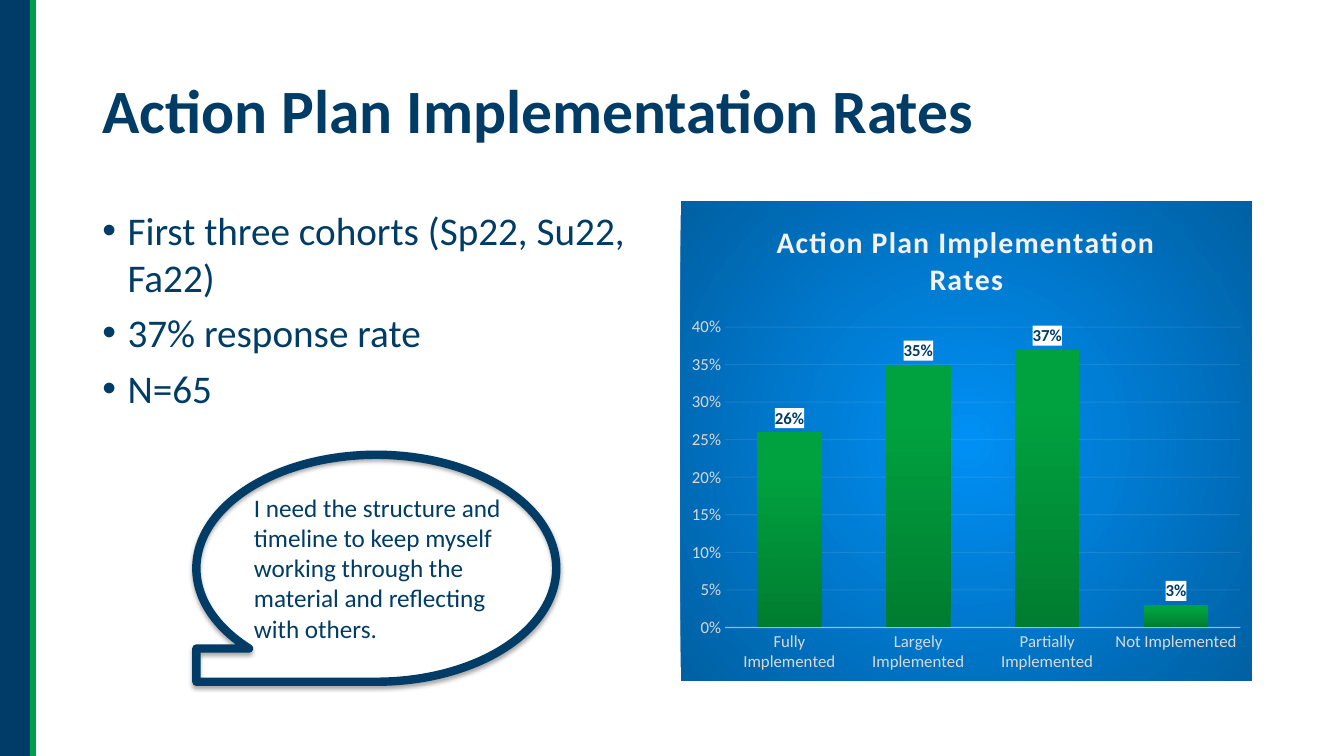
from lxml import etree
from pptx import Presentation
from pptx import util as u
from pptx.chart.data import CategoryChartData
from pptx.dml.color import RGBColor
from pptx.enum import chart as ch, shapes, text
from pptx.oxml import parse_xml
from pptx.oxml.ns import nsdecls, qn

COLORS = {
    "navy": "003C66", "green": "009F4D", "white": "FFFFFF",
    "axis text": "D9D9D9", "pale": "F2F2F2",
    "blue": "0090F5", "deep blue": "0060A3",
    "bar dark": "007D30", "bar mid": "00A23F", "bar light": "00A33F",
}


def write(frame, lines, size, color="navy", bold=False, bullet=False, before=0):
    """Fill a text frame with one paragraph per line."""
    frame.word_wrap = True
    for i, line in enumerate(lines):
        para = frame.paragraphs[0] if i == 0 else frame.add_paragraph()
        if i:
            para.space_before = u.Pt(before)
        if bullet:
            props = para._p.get_or_add_pPr()
            props.set("marL", str(u.Cm(0.635)))
            props.set("indent", str(u.Cm(-0.635)))
            etree.SubElement(props, qn("a:buFont")).set("typeface", "Arial")
            etree.SubElement(props, qn("a:buChar")).set("char", "•")
        para.alignment = text.PP_ALIGN.LEFT
        span = para.add_run()
        span.text = line
        font = span.font
        font.name, font.size, font.bold = "Calibri", u.Pt(size), bold
        font.color.rgb = RGBColor.from_string(COLORS[color])


def gradient(stops, direction):
    """Return a gradient fill element for (percent, color) stops."""
    marks = "".join(f'<a:gs pos="{pos * 1000}"><a:srgbClr val="{COLORS[name]}"/></a:gs>'
                    for pos, name in stops)
    return parse_xml(f'<a:gradFill {nsdecls("a")} rotWithShape="1">'
                     f'<a:gsLst>{marks}</a:gsLst>{direction}</a:gradFill>')


deck = Presentation()
deck.slide_width, deck.slide_height = u.Cm(33.87), u.Cm(19.05)
page = deck.slides.add_slide(deck.slide_layouts[5])
navy = RGBColor.from_string(COLORS["navy"])

# Left edge band
band = page.shapes.add_shape(shapes.MSO_SHAPE.RECTANGLE, 0, 0, u.Cm(0.84), u.Cm(19.05))
band.shadow.inherit = False
band.fill.solid()
band.fill.fore_color.rgb = navy
band.line.fill.background()
stripe = page.shapes.add_connector(shapes.MSO_CONNECTOR.STRAIGHT,
                                   u.Cm(0.84), u.Cm(-0.2), u.Cm(0.84), u.Cm(19.05))
stripe.line.color.rgb = RGBColor.from_string(COLORS["green"])
stripe.line.width = u.Pt(4.5)
etree.SubElement(stripe._element.spPr, qn("a:effectLst"))

# Title
title = page.shapes.title
title.left, title.top, title.width, title.height = u.Cm(2.33), u.Cm(1.01), u.Cm(29.21), u.Cm(3.68)
title.text_frame.vertical_anchor = text.MSO_ANCHOR.MIDDLE
write(title.text_frame, ["Action Plan Implementation Rates"], 44, bold=True)
title.text_frame.paragraphs[0].line_spacing = 0.9

# Survey facts
facts = page.shapes.add_textbox(u.Cm(2.33), u.Cm(5.07), u.Cm(14.4), u.Cm(12.09))
write(facts.text_frame, ["First three cohorts (Sp22, Su22, Fa22)", "37% response rate", "N=65"],
      28, bullet=True, before=6)

# Implementation chart
data = CategoryChartData(number_format="0%")
data.categories = ["Fully Implemented", "Largely Implemented",
                   "Partially Implemented", "Not Implemented"]
data.add_series("Action Plan Implementation Rates", [0.26, 0.35, 0.37, 0.03])
chart = page.shapes.add_chart(ch.XL_CHART_TYPE.COLUMN_CLUSTERED, u.Cm(17.15), u.Cm(5.07),
                              u.Cm(14.4), u.Cm(12.09), data).chart
chart.font.name, chart.font.size = "Calibri", u.Pt(12)
chart.font.color.rgb = RGBColor.from_string(COLORS["axis text"])
chart.has_legend = False
chart.has_title = True
write(chart.chart_title.text_frame, ["Action Plan Implementation Rates"], 21.3, "pale", bold=True)
heading = chart.chart_title.text_frame.paragraphs[0]
heading.alignment = text.PP_ALIGN.CENTER
heading.runs[0].font._element.set("spc", "100")
chart.chart_title.include_in_layout = False

backdrop = parse_xml(f'<c:spPr {nsdecls("c", "a")}><a:ln><a:noFill/></a:ln></c:spPr>')
backdrop.insert(0, gradient(
    [(0, "blue"), (100, "deep blue")],
    '<a:path path="circle"><a:fillToRect l="50000" t="50000" r="50000" b="50000"/></a:path>'))
chart._chartSpace.chart.addnext(backdrop)

# Axes
values, categories = chart.value_axis, chart.category_axis
values.minimum_scale, values.maximum_scale, values.major_unit = 0, 0.4, 0.05
values.tick_labels.number_format = "0%"
values.tick_labels.number_format_is_linked = False
values.format.line.fill.background()
for axis in (values, categories):
    axis.major_tick_mark = axis.minor_tick_mark = ch.XL_TICK_MARK.NONE
for line, width, opacity in ((categories.format.line, 1, 54),
                             (values.major_gridlines.format.line, 0.75, 10)):
    line.color.rgb = RGBColor.from_string(COLORS["pale"])
    line.width = u.Pt(width)
    tint = line.fill._xPr.find(".//" + qn("a:srgbClr"))
    etree.SubElement(tint, qn("a:alpha")).set("val", str(opacity * 1000))

# Bars and their labels
plot = chart.plots[0]
plot.gap_width, plot.overlap, plot.vary_by_categories = 100, -24, False
bars = plot.series[0]
bars.invert_if_negative = False
bars.format.line.fill.background()
bars._element.spPr.insert(0, gradient(
    [(0, "bar dark"), (80, "bar mid"), (100, "bar light")], '<a:lin ang="16200000" scaled="0"/>'))
labels = bars.data_labels
labels.show_value = True
labels.number_format, labels.number_format_is_linked = "0%", False
labels.position = ch.XL_LABEL_POSITION.OUTSIDE_END
labels.font.name, labels.font.size, labels.font.bold = "Calibri", u.Pt(12), True
labels.font.color.rgb = navy
labels._element.find(qn("c:txPr")).addprevious(parse_xml(
    f'<c:spPr {nsdecls("c", "a")}><a:solidFill><a:srgbClr val="{COLORS["white"]}"/>'
    '</a:solidFill></c:spPr>'))

# Speech bubble with its quote
bubble = page.shapes.add_shape(shapes.MSO_SHAPE.FLOWCHART_SEQUENTIAL_ACCESS_STORAGE,
                               u.Cm(4.95), u.Cm(11.46), u.Cm(9.07), u.Cm(5.72))
bubble._element.spPr.xfrm.set("flipH", "1")
bubble.fill.background()
bubble.line.color.rgb = navy
bubble.line.width = u.Pt(6)
bubble._element.spPr.append(parse_xml(
    f'<a:effectLst {nsdecls("a")}><a:outerShdw blurRad="{u.Pt(3.1)}" dist="{u.Pt(1.8)}" '
    'dir="5400000" rotWithShape="0"><a:srgbClr val="000000"><a:alpha val="35000"/>'
    '</a:srgbClr></a:outerShdw></a:effectLst>'))
quote = page.shapes.add_textbox(u.Cm(6.15), u.Cm(12.27), u.Cm(7.16), u.Cm(4.11))
write(quote.text_frame, ["I need the structure and timeline to keep myself working through "
                         "the material and reflecting with others."], 18)

deck.save("out.pptx")
